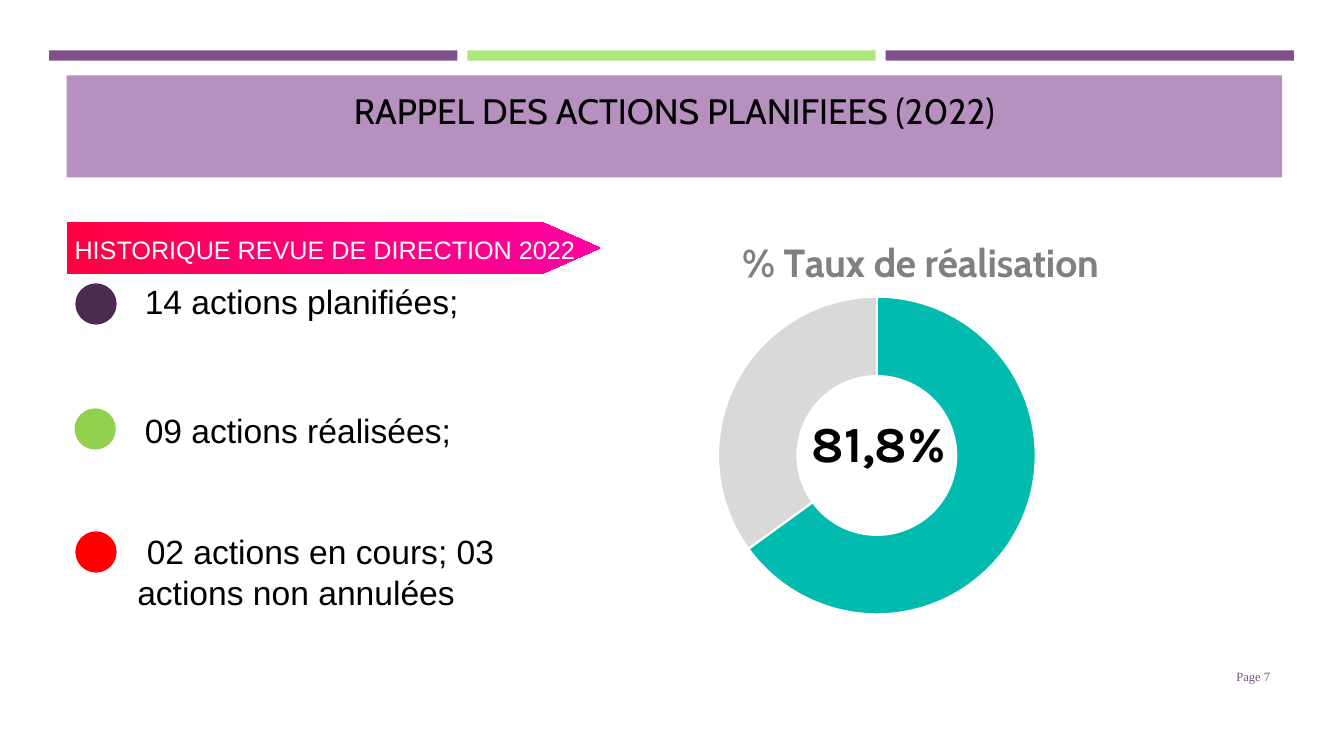
import copy

import pptx
import pptx.chart.data
import pptx.dml.color
import pptx.enum.chart
import pptx.enum.shapes
import pptx.enum.text
import pptx.oxml
import pptx.oxml.ns
import pptx.util

Cm = pptx.util.Cm
Pt = pptx.util.Pt
qn = pptx.oxml.ns.qn
SHAPES = pptx.enum.shapes.MSO_SHAPE
ALIGN = pptx.enum.text.PP_ALIGN
ANCHOR = pptx.enum.text.MSO_ANCHOR

PURPLE = "7F508B"
GREEN = "ADE67F"
BLACK = "000000"
WHITE = "FFFFFF"


def color(value):
    return pptx.dml.color.RGBColor.from_string(value)


def style_font(font, name, size, value, bold=False):
    font.name = name
    font.size = Pt(size)
    font.bold = bold
    font.color.rgb = color(value)


def add_block(page, kind, place, fill):
    shape = page.shapes.add_shape(kind, *map(Cm, place))
    shape.shadow.inherit = False
    shape.fill.solid()
    shape.fill.fore_color.rgb = color(fill)
    shape.line.fill.background()
    return shape


def write(box, text, name, size, value, bold=False, align=ALIGN.LEFT,
          anchor=ANCHOR.TOP, inset=0.13):
    frame = box.text_frame
    frame.word_wrap = True
    frame.vertical_anchor = anchor
    frame.margin_left = frame.margin_right = Cm(inset)
    frame.margin_top = frame.margin_bottom = Cm(0.13)
    para = frame.paragraphs[0]
    para.alignment = align
    span = para.add_run()
    span.text = text
    style_font(span.font, name, size, value, bold)
    return para


def add_text(page, place, *content, **options):
    box = page.shapes.add_textbox(*map(Cm, place))
    return write(box, *content, **options)


def add_arrow_banner(page):
    left, shoulder, tip = 1.68, 13.64, 15.14
    top, middle, bottom = 5.59, 6.25, 6.91
    outline = page.shapes.build_freeform(Cm(left), Cm(top))
    corners = [(shoulder, top), (tip, middle), (shoulder, bottom), (left, bottom)]
    outline.add_line_segments([(Cm(x), Cm(y)) for x, y in corners], close=True)
    banner = outline.convert_to_shape()
    banner.shadow.inherit = False
    banner.line.fill.background()
    banner.fill.gradient()
    banner.fill.gradient_angle = 0
    stop_list = banner._element.spPr.find(qn("a:gradFill")).find(qn("a:gsLst"))
    stop_list.append(copy.deepcopy(stop_list[0]))
    stops = [(0.02, "FF0040"), (0.37, "FF0071"), (0.99, "FF00A2")]
    for stop, (position, value) in zip(banner.fill.gradient_stops, stops):
        stop.position = position
        stop.color.rgb = color(value)


def set_layout(parent, index, settings):
    for old in parent.findall(qn("c:layout")):
        parent.remove(old)
    entries = "".join(f'<c:{key} val="{value}"/>' for key, value in settings)
    parent.insert(index, pptx.oxml.parse_xml(
        f'<c:layout {pptx.oxml.ns.nsdecls("c")}>'
        f"<c:manualLayout>{entries}</c:manualLayout></c:layout>"))


def add_rate_chart(page, place):
    data = pptx.chart.data.CategoryChartData()
    data.categories = ["1", "2"]
    data.add_series("Series 1", [65, 35])
    chart = page.shapes.add_chart(
        pptx.enum.chart.XL_CHART_TYPE.DOUGHNUT, *map(Cm, place), data).chart
    style_font(chart.font, "Cabin", 10, BLACK)
    chart.has_legend = False
    chart.has_title = True
    span = chart.chart_title.text_frame.paragraphs[0].add_run()
    span.text = "% Taux de réalisation"
    style_font(span.font, "Cabin", 28, "808080", True)
    set_layout(chart.chart_title._element, 1, [
        ("xMode", "edge"), ("yMode", "edge"), ("x", 0.22), ("y", 0.08)])
    plot = chart.plots[0]
    plot.vary_by_categories = True
    plot._element.find(qn("c:holeSize")).set("val", "82")
    set_layout(plot._element.getparent(), 0, [
        ("layoutTarget", "inner"), ("xMode", "edge"), ("yMode", "edge"),
        ("x", 0.18), ("y", 0.24), ("w", 0.59), ("h", 0.74)])
    for index, value in enumerate(["01BBAE", "D9D9D9"]):
        sector = plot.series[0].points[index].format
        sector.fill.solid()
        sector.fill.fore_color.rgb = color(value)
        sector.line.color.rgb = color(WHITE)
        sector.line.width = Pt(1.5)


def add_action(page, dot, fill, label, text):
    add_block(page, SHAPES.OVAL, (*dot, 1.04, 1.04), fill)
    para = add_text(page, label, text, "Arial", 24, BLACK)
    para._p.get_or_add_pPr().set("indent", str(Cm(0.24)))


def main():
    deck = pptx.Presentation()
    deck.slide_width, deck.slide_height = Cm(33.87), Cm(19.05)
    page = deck.slides.add_slide(deck.slide_layouts[6])

    for index, fill in enumerate([PURPLE, GREEN, PURPLE]):
        add_block(page, SHAPES.RECTANGLE, (1.24 + 10.54 * index, 1.27, 10.29, 0.26), fill)
    title = add_block(page, SHAPES.RECTANGLE, (1.68, 1.9, 30.63, 2.57), "B690BF")
    write(title, "RAPPEL DES ACTIONS PLANIFIEES (2022)", "Cabin", 25.2, BLACK,
          align=ALIGN.CENTER)
    title.text_frame.margin_top = Cm(0.36)

    add_arrow_banner(page)
    add_text(page, (1.75, 5.77, 13.84, 1.02), "HISTORIQUE REVUE DE DIRECTION 2022",
             "Arial", 18, WHITE)
    actions = [
        ((1.9, 7.14), "4B2C50", (3.28, 6.96, 9.55, 1.27), "14 actions planifiées;"),
        ((1.88, 10.29), "92D050", (3.28, 10.19, 8.92, 1.27), "09 actions réalisées;"),
        ((1.9, 13.39), "FF0000", (3.33, 13.26, 10.13, 2.31),
         "02 actions en cours; 03 actions non annulées"),
    ]
    for action in actions:
        add_action(page, *action)

    add_rate_chart(page, (15.44, 4.88, 14.02, 10.82))
    add_text(page, (19.86, 10.26, 4.57, 1.8), "81,8%", "Karla", 36, BLACK, True,
             align=ALIGN.CENTER, inset=0.25)
    add_text(page, (29.34, 16.54, 2.92, 1.02), "Page 7", "Times New Roman", 9, PURPLE,
             align=ALIGN.RIGHT, anchor=ANCHOR.MIDDLE, inset=0.25)
    deck.save("out.pptx")


if __name__ == "__main__":
    main()
